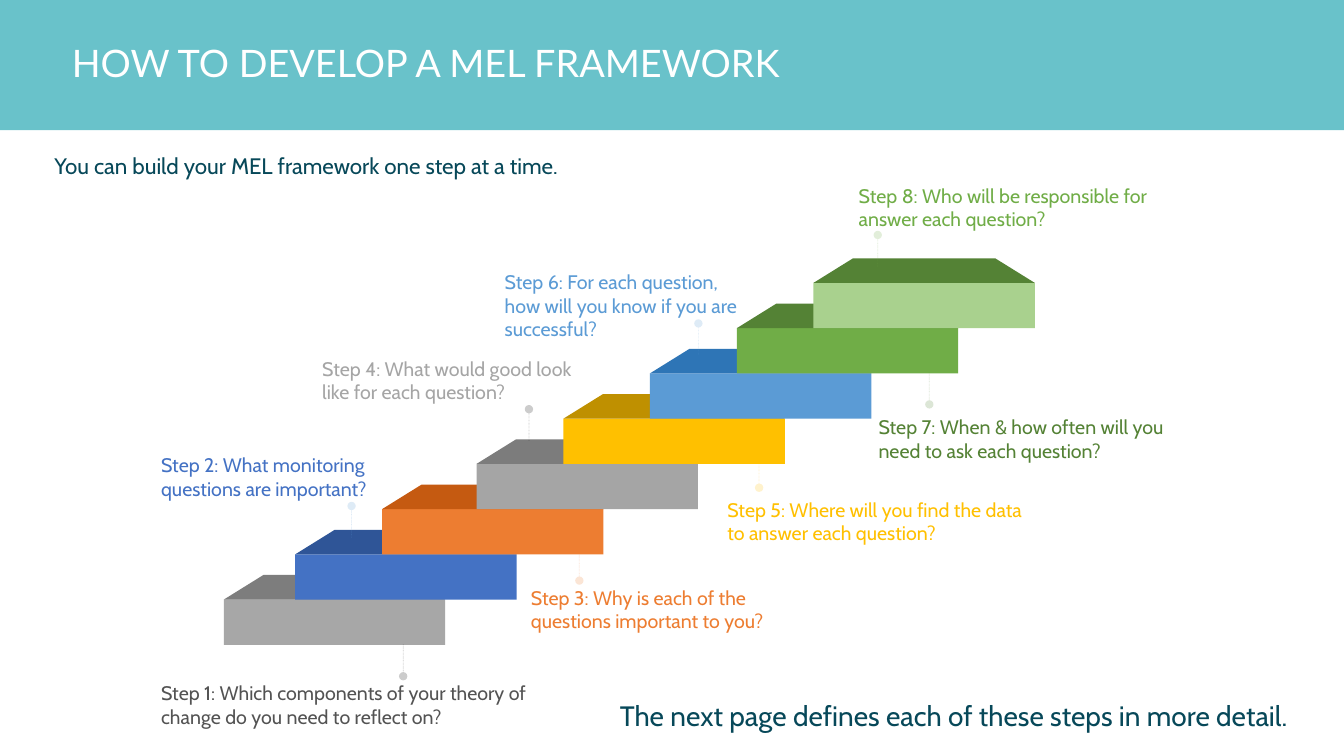
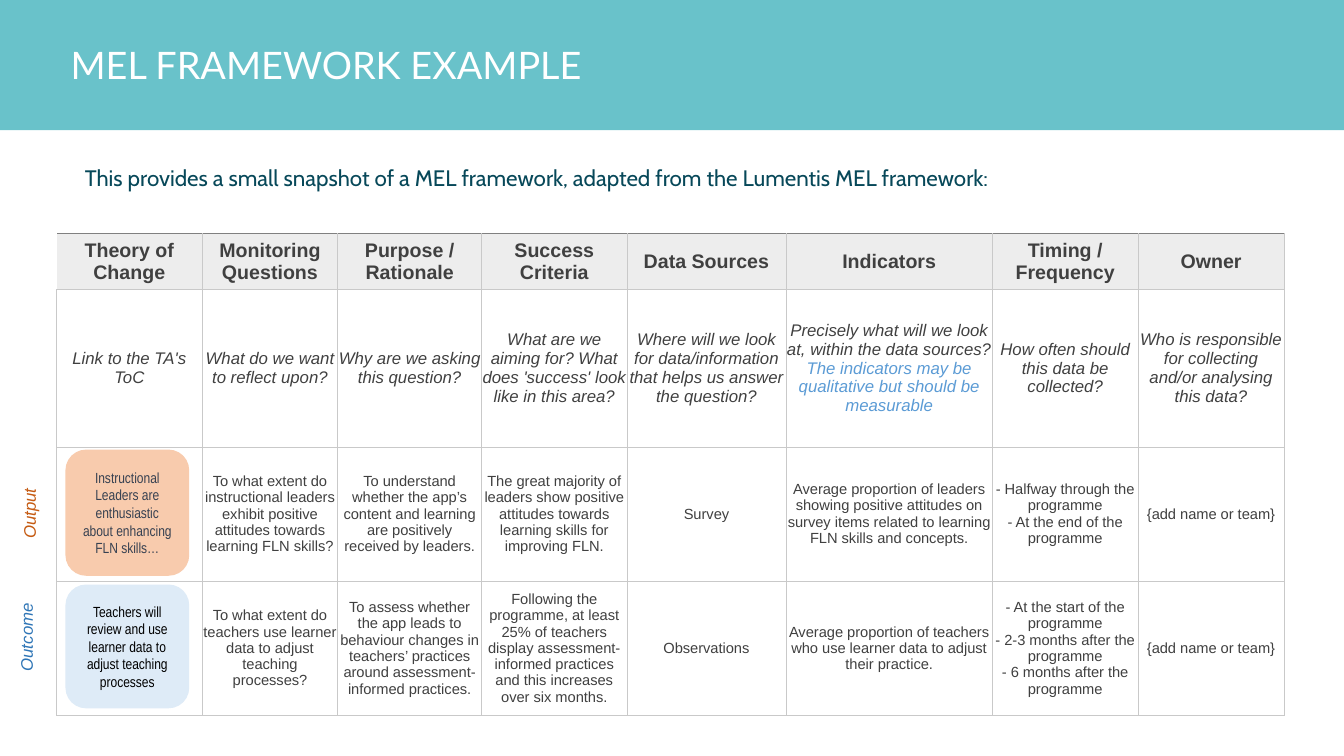
"""Build two slides on how to develop a MEL framework."""
from dataclasses import dataclass
from typing import Any, NamedTuple

from lxml.etree import SubElement
from pptx import Presentation
from pptx.dml.color import RGBColor
from pptx.enum.dml import MSO_LINE
from pptx.enum.shapes import MSO_CONNECTOR, MSO_SHAPE
from pptx.enum.text import MSO_ANCHOR, PP_ALIGN
from pptx.oxml.ns import qn
from pptx.util import Cm, Pt

WHITE = RGBColor(0xFF, 0xFF, 0xFF)
BLACK = RGBColor(0x00, 0x00, 0x00)
TEAL = RGBColor(0x69, 0xC2, 0xCA)
NAVY = RGBColor(0x07, 0x48, 0x59)
INK = RGBColor(0x40, 0x40, 0x40)
COAL = RGBColor(0x53, 0x53, 0x53)
SLATE = RGBColor(0x37, 0x41, 0x51)
ASH = RGBColor(0xA7, 0xA7, 0xA7)
ASH_TOP = RGBColor(0x7D, 0x7D, 0x7D)
COBALT = RGBColor(0x44, 0x72, 0xC4)
COBALT_TOP = RGBColor(0x2F, 0x55, 0x97)
ORANGE = RGBColor(0xED, 0x7D, 0x31)
RUST = RGBColor(0xC5, 0x5A, 0x11)
GREY = RGBColor(0xA5, 0xA5, 0xA5)
GREY_TOP = RGBColor(0x7C, 0x7C, 0x7C)
GOLD = RGBColor(0xFF, 0xC0, 0x00)
GOLD_TOP = RGBColor(0xBF, 0x90, 0x00)
BLUE = RGBColor(0x5B, 0x9B, 0xD5)
BLUE_TOP = RGBColor(0x2E, 0x75, 0xB6)
GREEN = RGBColor(0x70, 0xAD, 0x47)
FOREST = RGBColor(0x54, 0x82, 0x35)
LIME = RGBColor(0xA9, 0xD1, 0x8E)
PEACH = RGBColor(0xF8, 0xCB, 0xAD)
ICE = RGBColor(0xDE, 0xEB, 0xF7)
HEAD_FILL = RGBColor(0xED, 0xED, 0xED)
HEAD_RULE = RGBColor(0x80, 0x80, 0x80)
RULE = RGBColor(0xC9, 0xC9, 0xC9)

WIDE, HIGH = 33.87, 19.05
STAIR_W, STAIR_H, TREAD_H = 5.58, 1.14, 0.62
FIRST_Y = 15.11
LEAD = 0.8


class Box(NamedTuple):
    """Place and size in centimetres."""
    left: float
    top: float
    width: float
    height: float

    def cm(self) -> list[Cm]:
        """Give the four lengths."""
        return [Cm(side) for side in self]


@dataclass(frozen=True)
class Look:
    """Font of a text."""
    face: str
    size: float
    color: RGBColor
    bold: bool = False
    italic: bool = False


@dataclass(frozen=True)
class Step:
    """One stair with its label and lead line."""
    left: float
    front: RGBColor
    tread: RGBColor
    text: str
    ink: RGBColor
    label: tuple[float, float, float]
    dot: tuple[float, float]
    lead: RGBColor


@dataclass(frozen=True)
class Card:
    """One theory of change card with its side label."""
    box: Box
    fill: RGBColor
    ink: RGBColor
    text: str
    side: str
    side_box: Box
    side_ink: RGBColor


STEPS = [
    Step(5.64, ASH, ASH_TOP, "Step 1: Which components of your theory of change do you need to reflect on?",
         COAL, (3.81, 17.04, 10.52), (10.16, 17.04), BLACK),
    Step(7.44, COBALT, COBALT_TOP, "Step 2: What monitoring questions are important?",
         COBALT, (3.81, 11.3, 6.88), (8.86, 12.75), BLUE),
    Step(9.63, ORANGE, RUST, "Step 3: Why is each of the questions important to you?",
         ORANGE, (13.13, 14.63, 7.29), (14.6, 14.63), ORANGE),
    Step(12.01, GREY, GREY_TOP, "Step 4: What would good look like for each question?",
         GREY, (7.87, 8.86, 7.14), (13.33, 10.31), BLACK),
    Step(14.2, GOLD, GOLD_TOP, "Step 5: Where will you find the data to answer each question?",
         GOLD, (18.08, 12.42, 8), (19.13, 12.29), GOLD),
    Step(16.38, BLUE, BLUE_TOP, "Step 6: For each question, how will you know if you are successful?",
         BLUE, (12.47, 6.68, 6.73), (17.6, 8.15), BLUE),
    Step(18.57, GREEN, FOREST, "Step 7: When & how often will you need to ask each question?",
         FOREST, (21.89, 10.34, 8.1), (23.42, 10.19), FOREST),
    Step(20.5, LIME, FOREST, "Step 8: Who will be responsible for answer each question?",
         GREEN, (21.39, 4.5, 8.59), (22.12, 5.92), GREEN),
]

CARDS = [
    Card(Box(1.65, 11.33, 3.12, 3.18), PEACH, SLATE,
         "Instructional Leaders are enthusiastic about enhancing FLN skills…",
         "Output", Box(-0.99, 12.65, 3.53, 0.58), RUST),
    Card(Box(1.65, 14.73, 3.12, 3.12), ICE, BLACK,
         "Teachers will review and use learner data to adjust teaching processes",
         "Outcome", Box(-1.07, 15.77, 3.53, 0.58), BLUE_TOP),
]

COLS = [3.68, 3.41, 3.63, 3.66, 4.01, 5.2, 3.67, 3.68]
ROWS = [1.42, 3.96, 3.38, 3.39]
CELLS = [
    ["Theory of Change", "Monitoring Questions", "Purpose / Rationale", "Success Criteria",
     "Data Sources", "Indicators", "Timing / Frequency", "Owner"],
    ["Link to the TA's ToC", "What do we want to reflect upon?", "Why are we asking this question?",
     "What are we aiming for? What does 'success' look like in this area?",
     "Where will we look for data/information that helps us answer the question?",
     "Precisely what will we look at, within the data sources?\n"
     "The indicators may be qualitative but should be measurable",
     "How often should this data be collected?",
     "Who is responsible for collecting and/or analysing this data?"],
    ["",
     "To what extent do instructional leaders exhibit positive attitudes towards learning FLN skills?",
     "To understand whether the app’s content and learning are positively received by leaders.",
     "The great majority of leaders show positive attitudes towards learning skills for improving FLN.",
     "Survey",
     "Average proportion of leaders showing positive attitudes on survey items related to learning "
     "FLN skills and concepts.",
     "- Halfway through the programme\n- At the end of the programme", "{add name or team}"],
    ["", "To what extent do teachers use learner data to adjust teaching processes?",
     "To assess whether the app leads to behaviour changes in teachers’ practices around "
     "assessment-informed practices.",
     "Following the programme, at least 25% of teachers display assessment-informed practices "
     "and this increases over six months.",
     "Observations",
     "Average proportion of teachers who use learner data to adjust their practice.",
     "- At the start of the programme\n- 2-3 months after the programme\n- 6 months after the programme",
     "{add name or team}"],
]

TITLE = Look("Lato", 27, WHITE)
INTRO = Look("Cabin", 16, NAVY)
CLOSE = Look("Cabin", 20, NAVY)
BODY = Look("Arial", 10.5, INK)
ROW_LOOKS = [Look("Arial", 14, INK, bold=True), Look("Arial", 12, INK, italic=True), BODY, BODY]


def apply(item: Any, form: dict[str, Any]) -> None:
    """Set each format value on an item."""
    for key, value in form.items():
        setattr(item, key, value)


def inset(side: float, rise: float) -> dict[str, Any]:
    """Give frame margins in centimetres."""
    return {"margin_left": Cm(side), "margin_right": Cm(side),
            "margin_top": Cm(rise), "margin_bottom": Cm(rise)}


def write(frame: Any, text: str, look: Look, **form: Any) -> None:
    """Fill a text frame, one paragraph a line."""
    for spot, line in enumerate(text.split("\n")):
        para = frame.paragraphs[0] if spot == 0 else frame.add_paragraph()
        apply(para, form)
        run = para.add_run()
        run.text = line
        apply(run.font, {"name": look.face, "size": Pt(look.size),
                         "bold": look.bold, "italic": look.italic})
        run.font.color.rgb = look.color


def add_text(slide: Any, box: Box, text: str, look: Look, frame: dict[str, Any], **form: Any) -> Any:
    """Add a wrapped text box."""
    shape = slide.shapes.add_textbox(*box.cm())
    apply(shape.text_frame, {"word_wrap": True, **frame})
    write(shape.text_frame, text, look, **form)
    return shape


def add_block(slide: Any, kind: MSO_SHAPE, box: Box, fill: RGBColor) -> Any:
    """Add a plain filled shape."""
    shape = slide.shapes.add_shape(kind, *box.cm())
    shape.shadow.inherit = False
    shape.fill.solid()
    shape.fill.fore_color.rgb = fill
    shape.line.fill.background()
    return shape


def add_title(slide: Any, box: Box, text: str) -> None:
    """Add the slide title."""
    add_text(slide, box, text, TITLE,
             {**inset(0.13, 0.13), "vertical_anchor": MSO_ANCHOR.MIDDLE}, line_spacing=0.9)


def add_lead(slide: Any, step: Step, shift: float) -> None:
    """Add a pale dotted line that ends in a dot."""
    x, y = step.dot
    line = slide.shapes.add_connector(MSO_CONNECTOR.STRAIGHT, Cm(x), Cm(y + shift), Cm(x), Cm(y))
    apply(line.line, {"width": Pt(0.5), "dash_style": MSO_LINE.ROUND_DOT})
    line.line.color.rgb = step.lead
    props = line.element.spPr
    stroke = props.find(qn("a:ln"))
    SubElement(next(stroke.iter(qn("a:srgbClr"))), qn("a:alpha"), val="20000")
    SubElement(stroke, qn("a:tailEnd"), type="oval")
    SubElement(props, qn("a:effectLst"))


def add_stairs(slide: Any) -> None:
    """Draw the stairs, then their labels and lines."""
    for rank, step in enumerate(STEPS):
        top = FIRST_Y - STAIR_H * rank
        add_block(slide, MSO_SHAPE.RECTANGLE, Box(step.left, top, STAIR_W, STAIR_H), step.front)
        tread = add_block(slide, MSO_SHAPE.TRAPEZOID,
                          Box(step.left, top - TREAD_H, STAIR_W, TREAD_H), step.tread)
        tread.adjustments[0] = 1.61
    for rank, step in enumerate(STEPS):
        add_text(slide, Box(*step.label, 1.4), step.text, Look("Cabin", 14, step.ink), {})
        add_lead(slide, step, LEAD if rank % 2 else -LEAD)


def add_edge(props: Any, side: str, color: RGBColor) -> None:
    """Add one cell border."""
    edge = SubElement(props, qn(f"a:ln{side}"), w=str(Pt(0.5)))
    SubElement(SubElement(edge, qn("a:solidFill")), qn("a:srgbClr"), val=str(color))


def add_grid(slide: Any) -> None:
    """Add the framework table."""
    frame = slide.shapes.add_table(len(ROWS), len(COLS),
                                   *Box(1.42, 5.88, sum(COLS), sum(ROWS)).cm())
    table = frame.table
    apply(table, {"first_row": False, "horz_banding": False})
    for col, width in zip(table.columns, COLS):
        col.width = Cm(width)
    for row, height in zip(table.rows, ROWS):
        row.height = Cm(height)
    for spot, (cell, node) in enumerate(zip(table.iter_cells(), frame.element.iter(qn("a:tc")))):
        row, col = divmod(spot, len(COLS))
        for side in "LRTB":
            if side != "L" or row or col:
                add_edge(node.get_or_add_tcPr(), side, HEAD_RULE if side == "T" and not row else RULE)
        apply(cell, {**inset(0.02, 0.01), "vertical_anchor": MSO_ANCHOR.MIDDLE})
        cell.fill.solid()
        cell.fill.fore_color.rgb = WHITE if row else HEAD_FILL
        if CELLS[row][col]:
            write(cell.text_frame, CELLS[row][col], ROW_LOOKS[row], alignment=PP_ALIGN.CENTER)
    table.cell(1, 5).text_frame.paragraphs[1].runs[0].font.color.rgb = BLUE


def add_card(slide: Any, card: Card) -> None:
    """Add a rounded card and its upright label."""
    shape = add_block(slide, MSO_SHAPE.ROUNDED_RECTANGLE, card.box, card.fill)
    apply(shape.text_frame, {"word_wrap": True, "vertical_anchor": MSO_ANCHOR.MIDDLE})
    write(shape.text_frame, card.text, Look("Arial Narrow", 10.5, card.ink), alignment=PP_ALIGN.CENTER)
    side = add_text(slide, card.side_box, card.side, Look("Arial", 12, card.side_ink, italic=True),
                    inset(0, 0), alignment=PP_ALIGN.CENTER)
    side.rotation = 270


def main() -> None:
    """Build and save the deck."""
    deck = Presentation()
    apply(deck, {"slide_width": Cm(WIDE), "slide_height": Cm(HIGH)})
    blank = deck.slide_layouts[6]
    stairs, sample = (deck.slides.add_slide(blank) for _ in range(2))
    band = add_block(stairs, MSO_SHAPE.RECTANGLE, Box(0, 0, WIDE, 3.28), TEAL)
    blank.shapes.element.append(band.element)

    add_title(stairs, Box(1.68, 0.99, 22.63, 1.3), "HOW TO DEVELOP A MEL FRAMEWORK")
    add_text(stairs, Box(1.24, 3.78, 17.98, 1.45),
             "You can build your MEL framework one step at a time.", INTRO, inset(0.13, 0.13), line_spacing=0.9)
    add_stairs(stairs)
    add_text(stairs, Box(15.49, 17.48, 18.36, 1.12),
             "The next page defines each of these steps in more detail.", CLOSE, inset(0.13, 0.13))

    add_title(sample, Box(1.65, 1.04, 26.06, 1.3), "MEL FRAMEWORK EXAMPLE")
    add_text(sample, Box(2.01, 4.01, 30.23, 0.94),
             "This provides a small snapshot of a MEL framework, adapted from the Lumentis MEL framework:",
             INTRO, inset(0.13, 0.13))
    add_grid(sample)
    for card in CARDS:
        add_card(sample, card)
    deck.save("out.pptx")


if __name__ == "__main__":
    main()
